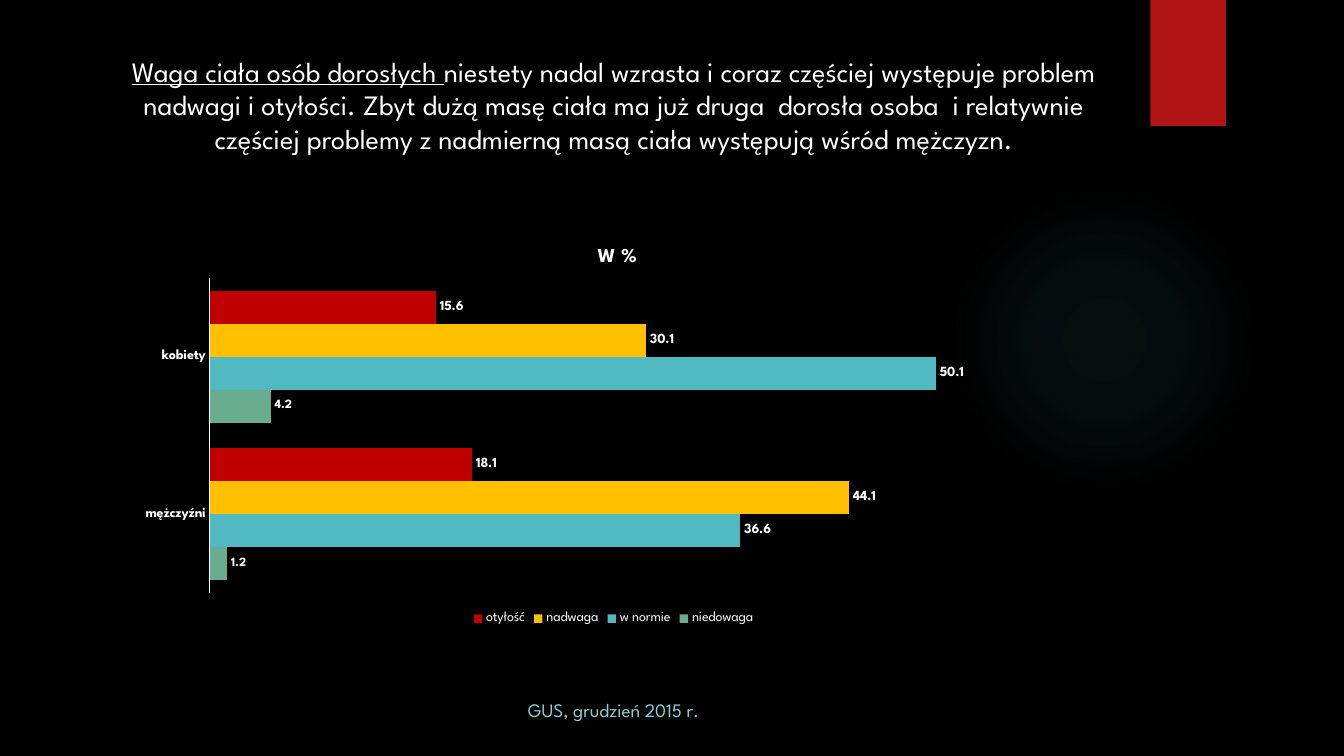
from lxml import etree
from pptx import Presentation
from pptx.chart.data import CategoryChartData as ChartData
from pptx.dml.color import RGBColor as Rgb
from pptx.enum.chart import XL_CHART_TYPE as Kind, XL_LABEL_POSITION as LabelPos
from pptx.enum.chart import XL_LEGEND_POSITION as LegendPos, XL_TICK_MARK as Tick
from pptx.enum.shapes import MSO_SHAPE as Shape
from pptx.enum.text import PP_ALIGN as Align
from pptx.oxml import parse_xml
from pptx.util import Inches, Pt

# Content
HEAD = [
    ("Waga ciała osób dorosłych ", True),
    ("niestety nadal wzrasta i coraz częściej występuje problem nadwagi i "
     "otyłości. Zbyt dużą masę ciała ma już druga  dorosła osoba  i relatywnie "
     "częściej problemy z nadmierną masą ciała występują wśród mężczyzn.", False),
]
NOTE = "GUS, grudzień 2015 r."
TITLE = "W %"
GROUPS = ["mężczyźni", "kobiety"]
SERIES = [  # name, values, colour, label size
    ("niedowaga", (1.2, 4.2), "green", 9),
    ("w normie", (36.6, 50.1), "teal", 10),
    ("nadwaga", (44.1, 30.1), "gold", 10),
    ("otyłość", (18.1, 15.6), "red", 10),
]

# Style
FONT = "League Spartan"
HEX = {"black": "000000", "white": "FFFFFF", "tab": "B01513", "note": "8AD0D6",
       "green": "6AAC90", "teal": "50B9C1", "gold": "FFC000", "red": "C00000"}
GLOW = [(0, 7), (36, 6), (69, 0)]  # stop and opacity, in percent
NS_A = "http://schemas.openxmlformats.org/drawingml/2006/main"
NS_C = "http://schemas.openxmlformats.org/drawingml/2006/chart"

# Places: left, top, width, height in inches
LEFT, WIDE = 1.26, 9.65
SPOTS = {"glow": (9.41, 1.83, 3.08, 3.08), "tab": (11.41, 0, 0.75, 1.25),
         "head": (1.15, 0.49, 9.88, 3), "chart": (LEFT, 2.25, WIDE, 3.99),
         "note": (LEFT, 6.5, WIDE, 0.62)}


def place(name):
    return [Inches(n) for n in SPOTS[name]]


def tint(name):
    return Rgb.from_string(HEX[name])


def style(font, size, color="white", bold=None):
    font.name, font.size, font.bold = FONT, Pt(size), bold
    font.color.rgb = tint(color)


def add_form(kind, name):
    form = slide.shapes.add_shape(kind, *place(name))
    form.shadow.inherit = False
    form.line.fill.background()
    return form


def add_text(name, parts, size, color):
    frame = slide.shapes.add_textbox(*place(name)).text_frame
    frame.word_wrap = True
    par = frame.paragraphs[0]
    par.alignment = Align.CENTER
    style(par.font, size, color)
    for words, under in parts:
        run = par.add_run()
        run.text = words
        style(run.font, size, color)
        run.font.underline = under
    return frame


def set_layout(parent, **spots):
    """Fix a chart part at shares of the chart's size."""
    for old in parent.findall(f"{{{NS_C}}}layout"):
        parent.remove(old)
    layout = etree.Element(f"{{{NS_C}}}layout")
    manual = etree.SubElement(layout, f"{{{NS_C}}}manualLayout")
    if "w" in spots:
        spots = {"layoutTarget": "inner", "xMode": "edge", "yMode": "edge", **spots}
    else:
        spots = {"xMode": "edge", "yMode": "edge", **spots}
    for key, val in spots.items():
        etree.SubElement(manual, f"{{{NS_C}}}{key}", val=str(val))
    text = parent.find(f"{{{NS_C}}}tx")
    parent.insert(0 if text is None else 1, layout)


# Slide
deck = Presentation()
deck.slide_width, deck.slide_height = Inches(13.33), Inches(7.5)
slide = deck.slides.add_slide(deck.slide_layouts[6])
slide.background.fill.solid()
slide.background.fill.fore_color.rgb = tint("black")

# Soft glow and red tab
glow = add_form(Shape.OVAL, "glow")
stops = "".join(
    f'<a:gs pos="{at * 1000}"><a:srgbClr val="{HEX["teal"]}">'
    f'<a:alpha val="{part * 1000}"/></a:srgbClr></a:gs>' for at, part in GLOW)
glow.fill.background()
props = glow.element.spPr
props.replace(props.find(f"{{{NS_A}}}noFill"), parse_xml(
    f'<a:gradFill xmlns:a="{NS_A}"><a:gsLst>{stops}</a:gsLst><a:path path="circle">'
    '<a:fillToRect l="50000" t="50000" r="50000" b="50000"/></a:path></a:gradFill>'))
tab = add_form(Shape.RECTANGLE, "tab")
tab.fill.solid()
tab.fill.fore_color.rgb = tint("tab")

# Text
add_text("note", [(NOTE, None)], 13.6, "note").margin_top = Inches(0.43)
add_text("head", HEAD, 20, "white")

# Chart
data = ChartData(number_format="0.0")
data.categories = GROUPS
for name, vals, _, _ in SERIES:
    data.add_series(name, vals)
chart = slide.shapes.add_chart(Kind.BAR_CLUSTERED, *place("chart"), data).chart
style(chart.font, 10)
chart.has_title = True
chart.chart_title.include_in_layout = False
par = chart.chart_title.text_frame.paragraphs[0]
par.text = TITLE
style(par.runs[0].font, 14, bold=True)
chart.has_legend = True
chart.legend.position = LegendPos.BOTTOM
chart.legend.include_in_layout = False
style(chart.legend.font, 10)

# Axes
cats, scale = chart.category_axis, chart.value_axis
cats.major_tick_mark = cats.minor_tick_mark = Tick.NONE
cats.format.line.color.rgb = tint("white")
cats.format.line.width = Pt(0.75)
style(cats.tick_labels.font, 10, bold=True)
scale.minimum_scale, scale.maximum_scale = 0, 60
scale.has_major_gridlines = False
scale.visible = False

# Bars
plot = chart.plots[0]
plot.gap_width, plot.overlap, plot.vary_by_categories = 77, 0, False
for bars, (_, _, color, size) in zip(plot.series, SERIES):
    bars.format.fill.solid()
    bars.format.fill.fore_color.rgb = tint(color)
    labels = bars.data_labels
    labels.show_value = True
    labels.number_format, labels.number_format_is_linked = "0.0", False
    labels.position = LabelPos.OUTSIDE_END
    style(labels.font, size, bold=True)

set_layout(chart.chart_title._element, x=0.48, y=0.04)
set_layout(plot._element.getparent(), x=0.085, y=0.127, w=0.894, h=0.784)

deck.save("out.pptx")
